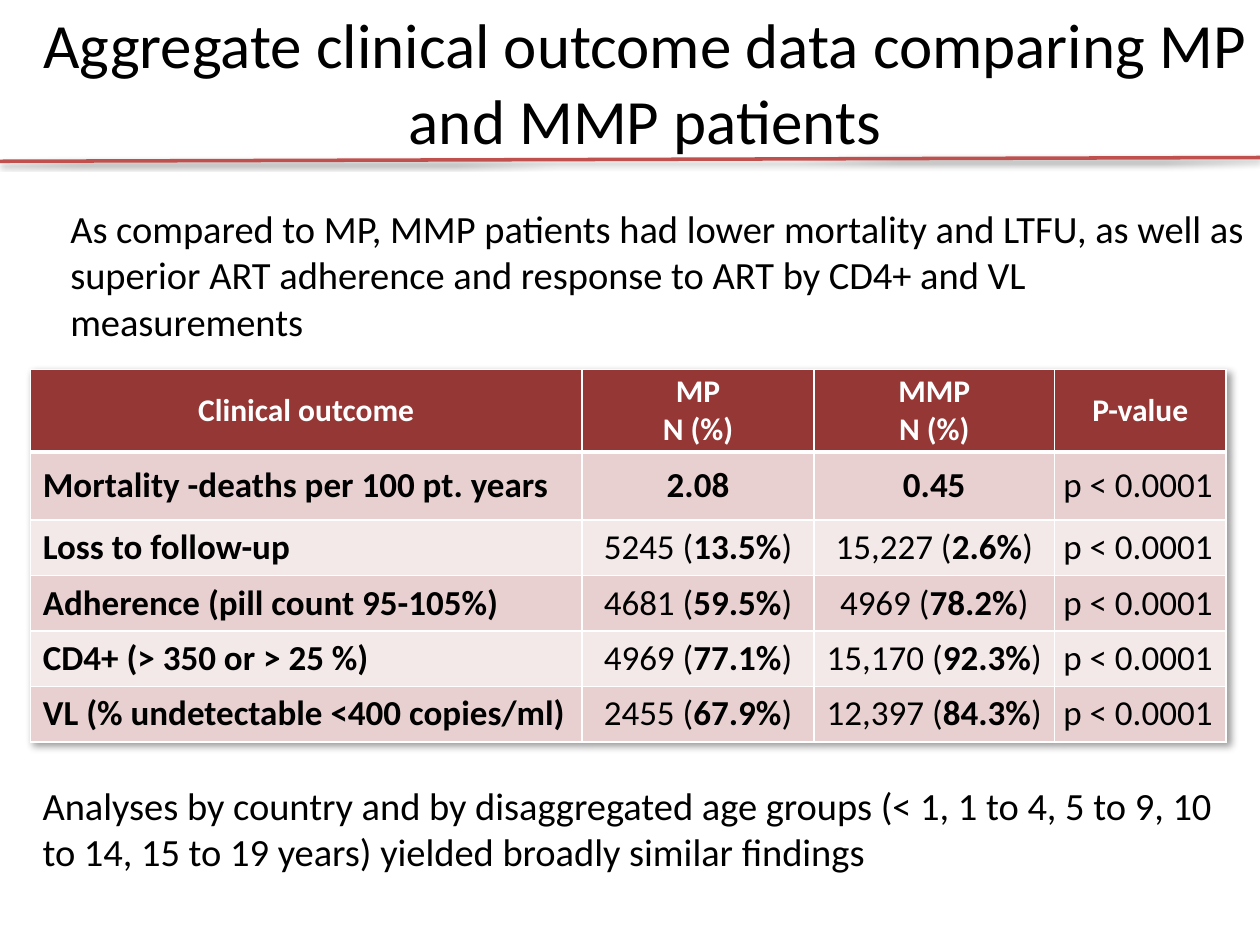
import pptx
import pptx.dml.color
import pptx.enum.shapes
import pptx.enum.text
import pptx.oxml
import pptx.oxml.ns
import pptx.util

Pt = pptx.util.Pt
RGBColor = pptx.dml.color.RGBColor
ALIGN = pptx.enum.text.PP_ALIGN
ANCHOR = pptx.enum.text.MSO_ANCHOR

BLACK = RGBColor(0x00, 0x00, 0x00)
WHITE = RGBColor(0xFF, 0xFF, 0xFF)
RULE_RED = RGBColor(0xC0, 0x50, 0x4D)
HEADER_RED = RGBColor(0x95, 0x37, 0x35)
BANDS = [RGBColor(0xE8, 0xD0, 0xD0), RGBColor(0xF4, 0xE9, 0xE9)]

FONT = "Calibri"
MARGIN = 17.28
COLUMN_WIDTHS = [315.36, 132.48, 137.52, 97.92]
ROW_HEIGHTS = [47.2, 38.9] + [31.7] * 4

# Asterisks enclose bold text
ROWS = [
    ["*Clinical outcome*", "*MP*\n*N (%)*", "*MMP*\n*N (%)*", "*P-value*"],
    ["*Mortality -deaths per 100 pt. years*", "*2.08*", "*0.45*", "p < 0.0001"],
    ["*Loss to follow-up*", "5245 (*13.5%*)", "15,227 (*2.6%*)", "p < 0.0001"],
    ["*Adherence (pill count 95-105%)*", "4681 (*59.5%*)", "4969 (*78.2%*)", "p < 0.0001"],
    ["*CD4+ (> 350 or > 25 %)*", "4969 (*77.1%*)", "15,170 (*92.3%*)", "p < 0.0001"],
    ["*VL (% undetectable <400 copies/ml)*", "2455 (*67.9%*)", "12,397 (*84.3%*)", "p < 0.0001"],
]


def set_format(target, values):
    for name, value in values.items():
        setattr(target, name, value)


def write_text(text_frame, text, size, color, **paragraph_format):
    for index, line in enumerate(text.split("\n")):
        paragraph = text_frame.paragraphs[0] if index == 0 else text_frame.add_paragraph()
        set_format(paragraph, paragraph_format)
        for part, words in enumerate(line.split("*")):
            if words:
                run = paragraph.add_run()
                run.text = words
                set_format(run.font, {"name": FONT, "size": Pt(size), "bold": part % 2 == 1})
                run.font.color.rgb = color


def add_text(slide, box, text, size, anchor=ANCHOR.TOP, **paragraph_format):
    shape = slide.shapes.add_textbox(*map(Pt, box))
    set_format(shape.text_frame, {"word_wrap": True, "vertical_anchor": anchor})
    write_text(shape.text_frame, text, size, BLACK, **paragraph_format)


def shadow_effect(blur, distance, degrees, opacity):
    return pptx.oxml.parse_xml(
        f'<a:effectLst {pptx.oxml.ns.nsdecls("a")}>'
        f'<a:outerShdw blurRad="{Pt(blur)}" dist="{Pt(distance)}" dir="{degrees * 60000}" '
        f'algn="tl" rotWithShape="0"><a:srgbClr val="{BLACK}">'
        f'<a:alpha val="{opacity * 1000}"/></a:srgbClr></a:outerShdw></a:effectLst>')


def add_rule(slide, start, end):
    line = slide.shapes.add_connector(
        pptx.enum.shapes.MSO_CONNECTOR.STRAIGHT, *map(Pt, start + end))
    line.line.color.rgb = RULE_RED
    line.line.width = Pt(2)
    line._element.spPr.append(shadow_effect(3.1, 1.6, 90, 38))


def set_borders(cell, widths):
    properties = cell._tc.get_or_add_tcPr()
    for index, (side, width) in enumerate(widths.items()):
        properties.insert(index, pptx.oxml.parse_xml(
            f'<a:ln{side} {pptx.oxml.ns.nsdecls("a")} w="{Pt(width)}">'
            f'<a:solidFill><a:srgbClr val="{WHITE}"/></a:solidFill></a:ln{side}>'))


def format_cell(cell, text, row, column):
    header = row == 0
    cell.vertical_anchor = ANCHOR.MIDDLE
    if header or column > 0:
        set_format(cell, {"margin_left": Pt(5), "margin_right": Pt(5),
                          "margin_top": 0, "margin_bottom": 0})
    cell.fill.solid()
    cell.fill.fore_color.rgb = HEADER_RED if header else BANDS[(row - 1) % 2]
    centred = header or column in (1, 2)
    write_text(cell.text_frame, text, 18 if header else 20, WHITE if header else BLACK,
               alignment=ALIGN.CENTER if centred else ALIGN.LEFT)
    set_borders(cell, {"L": 1, "R": 1, "T": 3 if row == 1 else 1, "B": 3 if header else 1})


def add_outcome_table(slide, left, top):
    frame = slide.shapes.add_table(
        len(ROWS), len(COLUMN_WIDTHS), Pt(left), Pt(top),
        Pt(sum(COLUMN_WIDTHS)), Pt(sum(ROW_HEIGHTS)))
    table = frame.table
    for column, width in zip(table.columns, COLUMN_WIDTHS):
        column.width = Pt(width)
    for row, height in zip(table.rows, ROW_HEIGHTS):
        row.height = Pt(height)
    for row, texts in enumerate(ROWS):
        for column, text in enumerate(texts):
            format_cell(table.cell(row, column), text, row, column)
    table._tbl.tblPr.insert(0, shadow_effect(4, 3, 45, 40))


def main():
    presentation = pptx.Presentation()
    set_format(presentation, {"slide_width": Pt(720), "slide_height": Pt(540)})
    slide = presentation.slides.add_slide(presentation.slide_layouts[6])

    # Title and rule
    add_text(slide, (MARGIN, 1.44, 702.72, 90),
             "Aggregate clinical outcome data comparing MP and MMP patients",
             36, ANCHOR.MIDDLE, alignment=ALIGN.CENTER)
    add_rule(slide, (0, 92.16), (720, 90))

    # Summary, results and closing remark
    add_outcome_table(slide, MARGIN, 211)
    add_text(slide, (33.12, 113.76, 686.88, 85.68),
             "As compared to MP, MMP patients had lower mortality and LTFU, as well as "
             "superior ART adherence and response to ART by CD4+ and VL measurements",
             22, space_before=Pt(4.4))
    add_text(slide, (MARGIN, 443.52, 684, 60.48),
             "Analyses by country and by disaggregated age groups (< 1, 1 to 4, 5 to 9, 10 "
             "to 14, 15 to 19 years) yielded broadly similar findings", 22)

    presentation.save("out.pptx")


if __name__ == "__main__":
    main()
